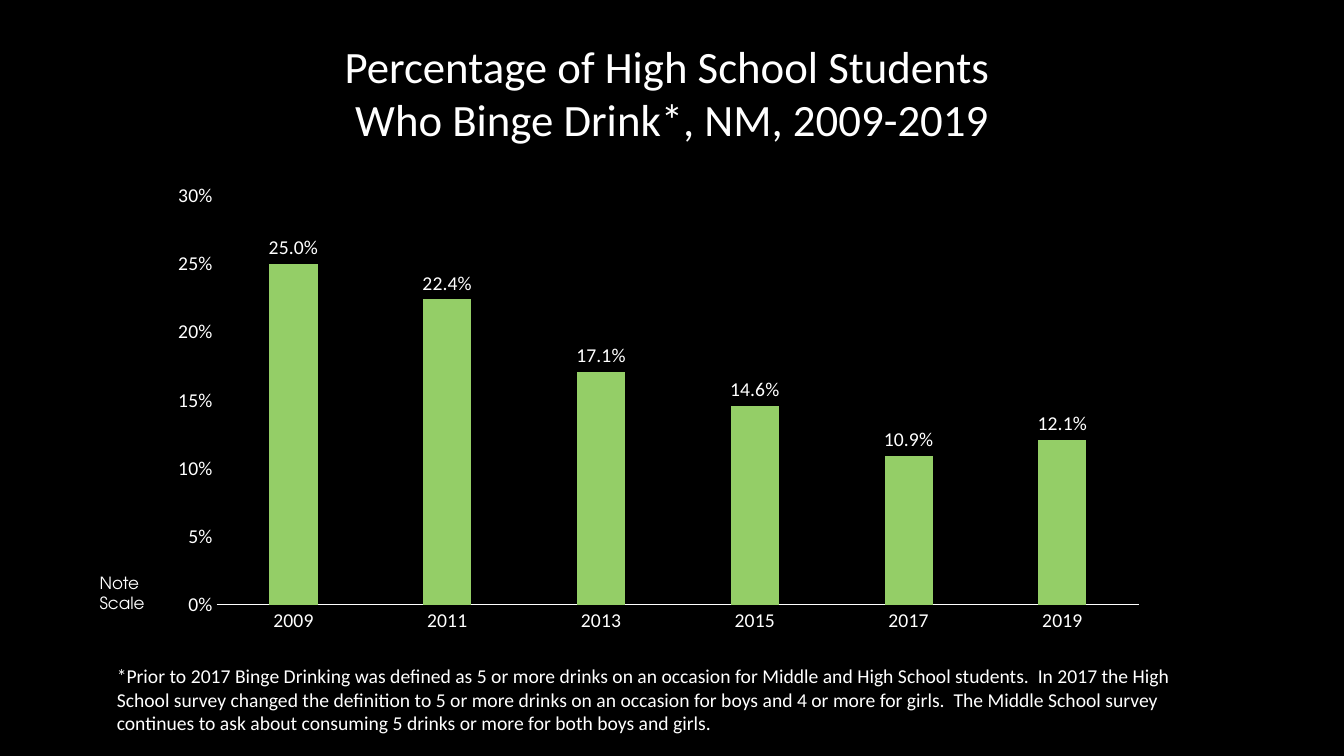
from lxml import etree
from pptx import Presentation
from pptx import util as u
from pptx.chart.data import CategoryChartData
from pptx.dml.color import RGBColor
from pptx.enum import chart as ch, text

# Content
TITLE = ["Percentage of High School Students ", "Who Binge Drink*, NM, 2009-2019"]
RATES = {"2009": 0.25, "2011": 0.224, "2013": 0.171,
         "2015": 0.146, "2017": 0.109, "2019": 0.121}
NOTE = ("*Prior to 2017 Binge Drinking was defined as 5 or more drinks on an "
        "occasion for Middle and High School students.  In 2017 the High School "
        "survey changed the definition to 5 or more drinks on an occasion for boys "
        "and 4 or more for girls.  The Middle School survey continues to ask about "
        "consuming 5 drinks or more for both boys and girls.")
SCALE = "Note Scale"

# Places in points: left, top, width, height
TITLE_BOX = (130.3, 23.8, 699.8, 85)
CHART_BOX = (99.4, 115.9, 748.1, 347)
NOTE_BOX = (76.3, 470.9, 793.4, 58.3)
SCALE_BOX = (64.1, 405.4, 55.4, 37.4)
PLOT = {"x": 0.074, "y": 0.069, "w": 0.881, "h": 0.842}
WHITE, BLACK, GREEN = "FFFFFF", "000000", "94CE67"


def color(code):
    return RGBColor.from_string(code)


def points(box):
    return [u.Pt(n) for n in box]


def style(font, size, face="Calibri"):
    font.size, font.name, font.bold = u.Pt(size), face, False
    font.color.rgb = color(WHITE)


def write(shape, lines, size, face="Calibri", align=text.PP_ALIGN.LEFT):
    frame = shape.text_frame
    frame.word_wrap = True
    frame.auto_size = text.MSO_AUTO_SIZE.NONE
    frame.vertical_anchor = text.MSO_ANCHOR.TOP
    frame.text = "\n".join(lines)
    for para in frame.paragraphs:
        para.alignment = align
        para.space_before = u.Pt(0)
        style(para.font, size, face)


deck = Presentation()
deck.slide_width, deck.slide_height = u.Pt(960), u.Pt(540)
slide = deck.slides.add_slide(deck.slide_layouts[5])
slide.background.fill.solid()
slide.background.fill.fore_color.rgb = color(BLACK)

# Title
title = slide.shapes.title
title.left, title.top, title.width, title.height = points(TITLE_BOX)
write(title, TITLE, 32, align=text.PP_ALIGN.CENTER)

# Column chart
data = CategoryChartData(number_format="0.0%")
data.categories = list(RATES)
data.add_series("Series 1", list(RATES.values()))
chart = slide.shapes.add_chart(
    ch.XL_CHART_TYPE.COLUMN_CLUSTERED, *points(CHART_BOX), data).chart
chart.has_legend = chart.has_title = False
style(chart.font, 14)

plot = chart.plots[0]
plot.gap_width, plot.overlap, plot.vary_by_categories = 219, -27, False
bars = plot.series[0]
bars.format.fill.solid()
bars.format.fill.fore_color.rgb = color(GREEN)
labels = bars.data_labels
labels.show_value = True
labels.position = ch.XL_LABEL_POSITION.OUTSIDE_END
labels.number_format, labels.number_format_is_linked = "0.0%", False
style(labels.font, 14)

# Axes
years, share = chart.category_axis, chart.value_axis
for axis in (years, share):
    axis.has_major_gridlines = False
    axis.major_tick_mark = axis.minor_tick_mark = ch.XL_TICK_MARK.NONE
    style(axis.tick_labels.font, 14)
years.format.line.color.rgb = color(WHITE)
years.format.line.width = u.Pt(0.75)
share.format.line.fill.background()
share.minimum_scale, share.maximum_scale, share.major_unit = 0, 0.3, 0.05
share.tick_labels.number_format = "0%"
share.tick_labels.number_format_is_linked = False

# Fixed inner plot area
C = "{http://schemas.openxmlformats.org/drawingml/2006/chart}"
area = chart.element.find(f".//{C}plotArea")
for old in area.findall(f"{C}layout"):
    area.remove(old)
layout = etree.Element(f"{C}layout")
area.insert(0, layout)
manual = etree.SubElement(layout, f"{C}manualLayout")
rules = {"layoutTarget": "inner", "xMode": "edge", "yMode": "edge", **PLOT}
for tag, val in rules.items():
    etree.SubElement(manual, C + tag).set("val", str(val))

# Notes
write(slide.shapes.add_textbox(*points(NOTE_BOX)), [NOTE], 14)
write(slide.shapes.add_textbox(*points(SCALE_BOX)), [SCALE], 12, "TeX Gyre Adventor")

deck.save("out.pptx")
